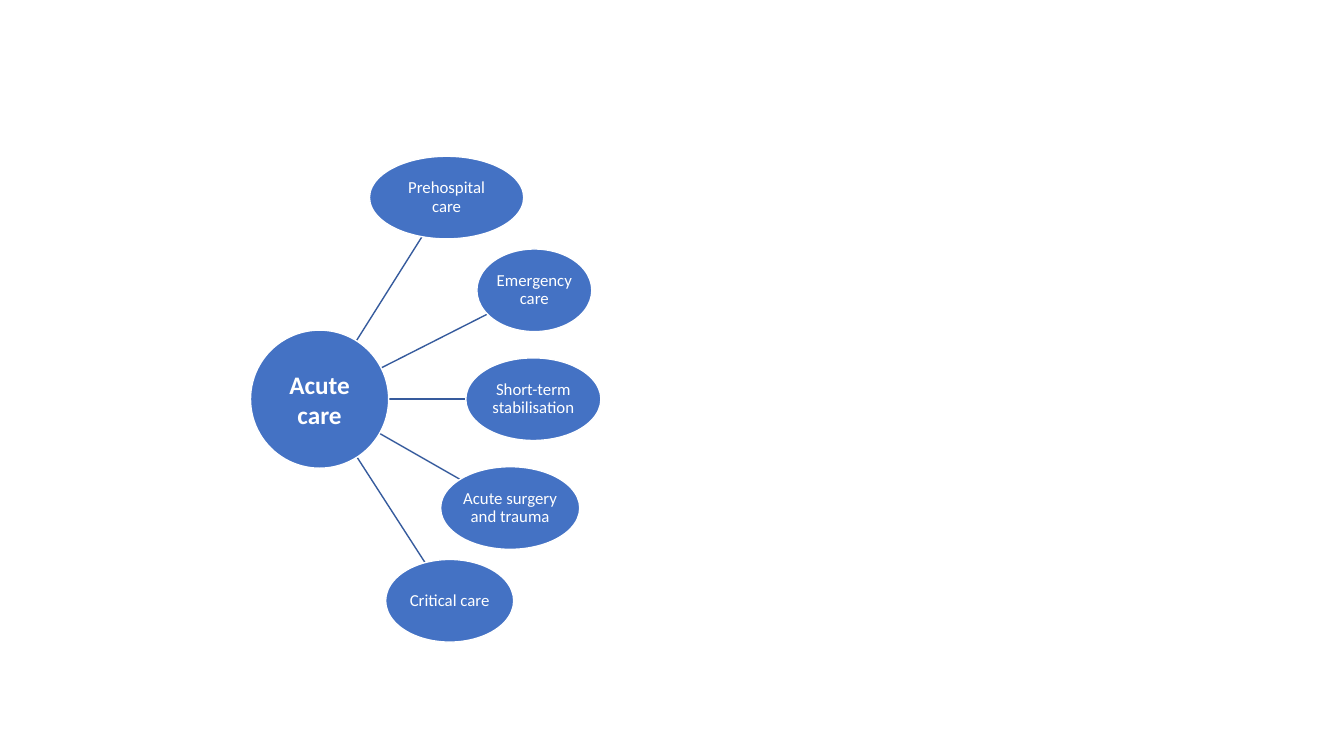
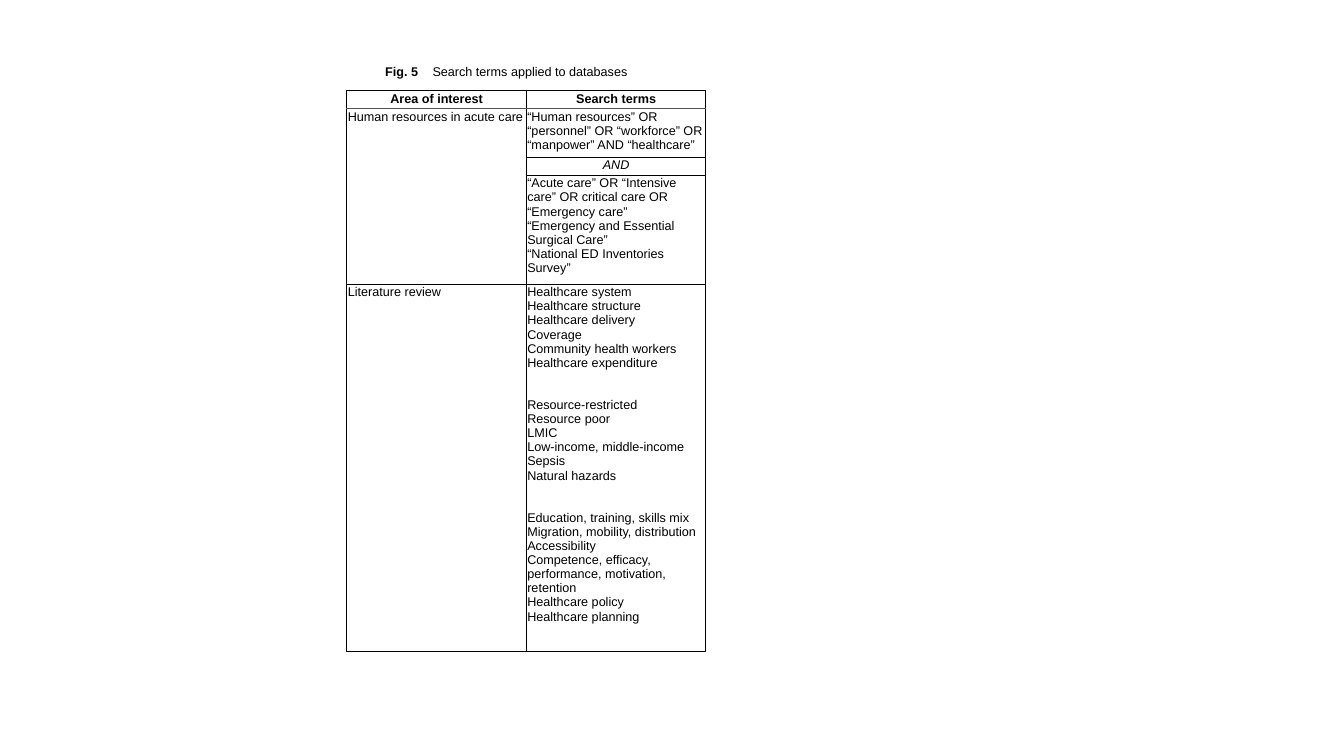
from dataclasses import dataclass
from math import hypot

from lxml.etree import SubElement
from pptx import Presentation
from pptx.dml.color import RGBColor
from pptx.enum.shapes import MSO_CONNECTOR, MSO_SHAPE
from pptx.enum.text import MSO_ANCHOR, MSO_AUTO_SIZE, PP_ALIGN
from pptx.oxml import parse_xml
from pptx.oxml.ns import nsdecls, qn
from pptx.util import Inches, Pt

# Content: label, centre x, centre y, width, height
HUB = ("Acute care", 3.17, 3.96, 1.37, 1.37)
BRANCHES = [
    ("Prehospital care", 4.43, 1.96, 1.53, 0.82),
    ("Emergency care", 5.30, 2.88, 1.14, 0.82),
    ("Short-term stabilisation", 5.29, 3.96, 1.34, 0.82),
    ("Acute surgery and trauma", 5.06, 5.04, 1.38, 0.82),
    ("Critical care", 4.46, 5.96, 1.27, 0.82),
]

CAPTION = ("Fig. 5", "Search terms applied to databases")
HEADINGS = ("Area of interest", "Search terms")
AREAS = {1: "Human resources in acute care", 4: "Literature review"}
STAFF_TERMS = ["“Human resources” OR “personnel” OR “workforce” OR “manpower” AND “healthcare”"]
CARE_TERMS = [
    "“Acute care” OR “Intensive care” OR critical care OR “Emergency care”",
    "“Emergency and Essential Surgical Care”",
    "“National ED Inventories Survey”",
]
REVIEW_GROUPS = [
    ["Healthcare system", "Healthcare structure", "Healthcare delivery", "Coverage",
     "Community health workers", "Healthcare expenditure"],
    ["Resource-restricted", "Resource poor", "LMIC", "Low-income, middle-income",
     "Sepsis", "Natural hazards"],
    ["Education, training, skills mix", "Migration, mobility, distribution", "Accessibility",
     "Competence, efficacy, performance, motivation, retention",
     "Healthcare policy", "Healthcare planning"],
]

# Table geometry and rule weights (points; 0 means no rule)
TABLE_AT = (3.44, 0.9)
COLUMN_WIDTH = 1.78
ROW_HEIGHTS = (0.18, 0.48, 0.18, 1.08, 3.64)
ROW_RULES = [(1, 0.75, 0, 0, 0.75, 0.75), (1, 0.75, 1, 1, 0.75, 0.75)]
COLUMN_RULES = (1, 0.75, 1)


@dataclass(frozen=True)
class Theme:
    blue: str = "4472C4"
    spoke: str = "365B9D"
    white: str = "FFFFFF"
    black: str = "000000"
    grey: str = "515151"
    diagram_font: str = "Calibri"
    table_font: str = "Arial"
    hub_size: float = 18
    branch_size: float = 12
    table_size: float = 9
    group_gap: float = 20
    inset: float = 0.01


THEME = Theme()
TABLE_TEXT = {"name": THEME.table_font, "size": Pt(THEME.table_size), "bold": False}


def apply(target, formats):
    for attribute, value in formats.items():
        setattr(target, attribute, value)


def add_run(paragraph, text, color, **formats):
    run = paragraph.add_run()
    run.text = text
    apply(run.font, formats)
    run.font.color.rgb = RGBColor.from_string(color)


def inset_all(target, inset):
    sides = ("left", "right", "top", "bottom")
    apply(target, {f"margin_{side}": Inches(inset) for side in sides})


# Diagram slide
def add_bubble(slide, bubble, size, bold, spacing):
    label, x, y, width, height = bubble
    oval = slide.shapes.add_shape(MSO_SHAPE.OVAL, Inches(x - width / 2), Inches(y - height / 2),
                                  Inches(width), Inches(height))
    oval.shadow.inherit = False
    oval.fill.solid()
    oval.fill.fore_color.rgb = RGBColor.from_string(THEME.blue)
    oval.line.color.rgb = RGBColor.from_string(THEME.white)
    oval.line.width = Pt(1)
    frame = oval.text_frame
    inset_all(frame, THEME.inset)
    apply(frame, {"word_wrap": True, "vertical_anchor": MSO_ANCHOR.MIDDLE})
    paragraph = frame.paragraphs[0]
    apply(paragraph, {"alignment": PP_ALIGN.CENTER, "line_spacing": spacing})
    add_run(paragraph, label, THEME.white, name=THEME.diagram_font, size=Pt(size), bold=bold)


def edge_point(bubble, toward):
    """Point on a bubble's outline on the way to another bubble's centre."""
    _, x, y, width, height = bubble
    dx, dy = toward[1] - x, toward[2] - y
    share = 1 / hypot(dx / (width / 2), dy / (height / 2))
    return Inches(x + dx * share), Inches(y + dy * share)


def add_spoke(slide, branch):
    spoke = slide.shapes.add_connector(MSO_CONNECTOR.STRAIGHT, *edge_point(HUB, branch),
                                       *edge_point(branch, HUB))
    spoke.line.color.rgb = RGBColor.from_string(THEME.spoke)
    spoke.line.width = Pt(1)
    SubElement(spoke._element.spPr, qn("a:effectLst"))


def build_diagram(deck):
    slide = deck.slides.add_slide(deck.slide_layouts[6])
    for branch in BRANCHES:
        add_spoke(slide, branch)
    add_bubble(slide, HUB, THEME.hub_size, True, 1.0)
    for branch in BRANCHES:
        add_bubble(slide, branch, THEME.branch_size, False, 0.9)


# Search terms slide
def add_caption(slide):
    title = slide.shapes.title
    apply(title, {"left": Inches(3.72), "top": Inches(0.58),
                  "width": Inches(2.8), "height": Inches(0.25)})
    frame = title.text_frame
    inset_all(frame, 0.05)
    apply(frame, {"margin_left": Inches(0.1), "word_wrap": False,
                  "auto_size": MSO_AUTO_SIZE.NONE, "vertical_anchor": MSO_ANCHOR.MIDDLE})
    paragraph = frame.paragraphs[0]
    paragraph.alignment = PP_ALIGN.LEFT
    tabs = SubElement(paragraph._p.get_or_add_pPr(), qn("a:tabLst"))
    SubElement(tabs, qn("a:tab"), pos=str(Inches(0.47)), algn="l")
    number, text = CAPTION
    add_run(paragraph, number + "\t", THEME.black, **{**TABLE_TEXT, "bold": True})
    add_run(paragraph, text, THEME.black, **TABLE_TEXT)


def write_cell(cell, groups, align=PP_ALIGN.LEFT, **formats):
    frame = cell.text_frame
    for g, group in enumerate(groups):
        for i, line in enumerate(group):
            paragraph = frame.paragraphs[0] if g == i == 0 else frame.add_paragraph()
            paragraph.alignment = align
            if g and i == 0:
                paragraph.space_before = Pt(THEME.group_gap)
            add_run(paragraph, line, THEME.black, **{**TABLE_TEXT, **formats})


def rule_cell(cell, row, column):
    bottom = row + (cell.span_height if cell.is_merge_origin else 1)
    rules = {"L": (COLUMN_RULES[column], THEME.black),
             "R": (COLUMN_RULES[column + 1], THEME.black)}
    for side, edge in (("T", row), ("B", bottom)):
        rules[side] = (ROW_RULES[column][edge], THEME.grey if edge == 1 else THEME.black)
    properties = cell._tc.get_or_add_tcPr()
    for position, (side, (weight, color)) in enumerate(rules.items()):
        paint = f'<a:solidFill><a:srgbClr val="{color}"/></a:solidFill>' if weight else "<a:noFill/>"
        properties.insert(position, parse_xml(
            f'<a:ln{side} {nsdecls("a")} w="{Pt(weight)}">{paint}</a:ln{side}>'))


def build_search_terms(deck):
    slide = deck.slides.add_slide(deck.slide_layouts[5])
    add_caption(slide)
    left, top = TABLE_AT
    columns = len(HEADINGS)
    terms = slide.shapes.add_table(
        len(ROW_HEIGHTS), columns, Inches(left), Inches(top),
        Inches(COLUMN_WIDTH * columns), Inches(sum(ROW_HEIGHTS))).table
    apply(terms, {"first_row": False, "horz_banding": False})
    for column in terms.columns:
        column.width = Inches(COLUMN_WIDTH)
    for row, height in zip(terms.rows, ROW_HEIGHTS):
        row.height = Inches(height)
    terms.cell(1, 0).merge(terms.cell(3, 0))

    for row in range(len(ROW_HEIGHTS)):
        for column in range(columns):
            cell = terms.cell(row, column)
            inset_all(cell, THEME.inset)
            cell.fill.background()
            rule_cell(cell, row, column)

    for column, heading in enumerate(HEADINGS):
        write_cell(terms.cell(0, column), [[heading]], PP_ALIGN.CENTER, bold=True)
    for row, area in AREAS.items():
        write_cell(terms.cell(row, 0), [[area]])
    write_cell(terms.cell(1, 1), [STAFF_TERMS])
    write_cell(terms.cell(2, 1), [["AND"]], PP_ALIGN.CENTER, italic=True)
    write_cell(terms.cell(3, 1), [CARE_TERMS])
    write_cell(terms.cell(4, 1), REVIEW_GROUPS)

    # Small type in the spanned cells keeps their rows from growing
    for row in (2, 3):
        terms.cell(row, 0).text_frame.paragraphs[0].font.size = Pt(THEME.table_size)


def main():
    deck = Presentation()
    apply(deck, {"slide_width": Inches(13.33), "slide_height": Inches(7.5)})
    build_diagram(deck)
    build_search_terms(deck)
    deck.save("out.pptx")


if __name__ == "__main__":
    main()
